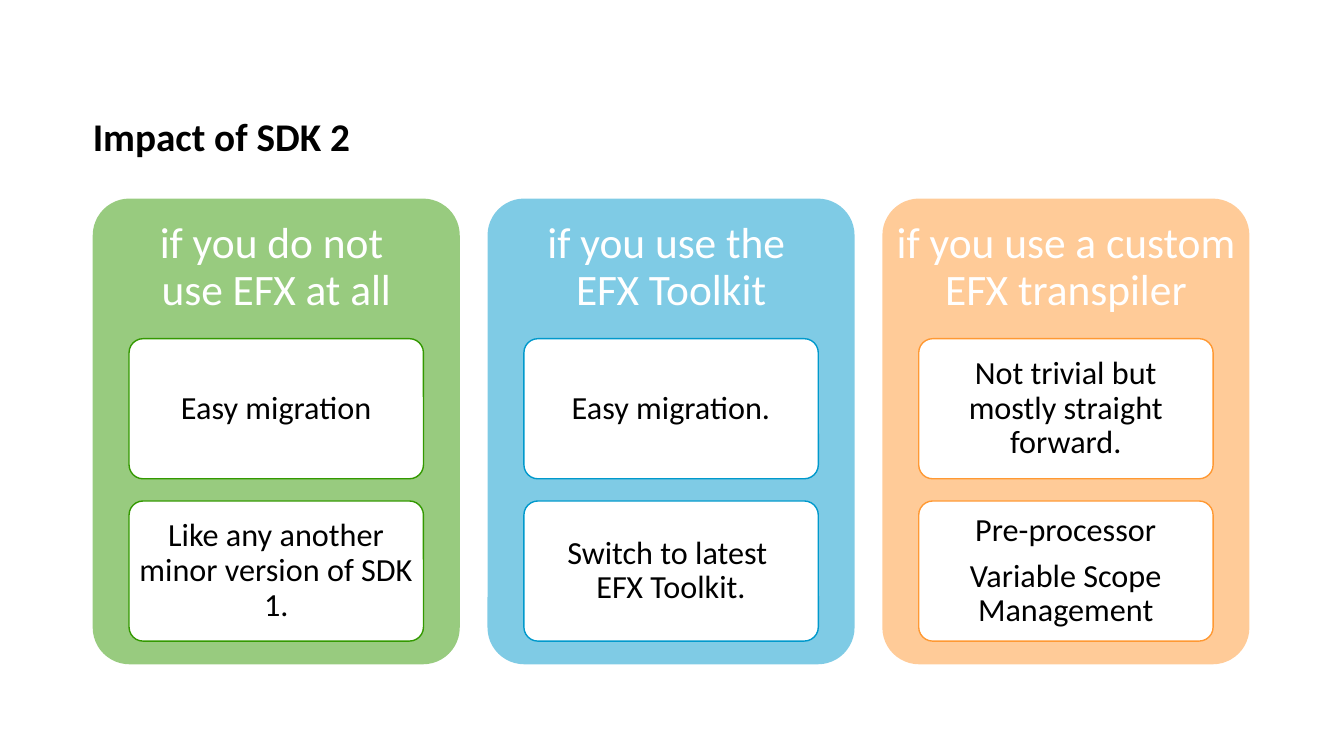
from lxml import etree
from pptx import Presentation
from pptx.dml.color import RGBColor
from pptx.enum import shapes, text
from pptx.oxml import ns
from pptx.util import Inches, Pt

COLORS = {
    "green": "339900",
    "blue": "0099CC",
    "orange": "FF9933",
    "white": "FFFFFF",
    "black": "000000",
}

# Panel grid, in inches
LEFT, TOP = 0.92, 1.97
PANEL_WIDTH, PANEL_HEIGHT, PANEL_STEP = 3.64, 4.62, 3.916
HEADING_HEIGHT = 1.38
CARD_WIDTH, CARD_HEIGHT, CARD_STEP = 2.92, 1.39, 1.61
CARD_TOP = 3.36

PANELS = [
    ("green", "if you do not \nuse EFX at all",
     [["Easy migration"], ["Like any another minor version of SDK 1."]]),
    ("blue", "if you use the \nEFX Toolkit",
     [["Easy migration."], ["Switch to latest \nEFX Toolkit."]]),
    ("orange", "if you use a custom EFX transpiler",
     [["Not trivial but mostly straight forward."],
      ["Pre-processor", "Variable Scope Management"]]),
]


def rgb(name):
    return RGBColor.from_string(COLORS[name])


def write_text(shape, paragraphs, size, color="black", bold=False,
               align=text.PP_ALIGN.CENTER, anchor=text.MSO_ANCHOR.MIDDLE,
               insets=(0, 0, 0, 0), space_after=0):
    """Fill a shape with paragraphs; a newline inside one is a line break."""
    frame = shape.text_frame
    frame.word_wrap = True
    frame.auto_size = text.MSO_AUTO_SIZE.NONE
    frame.vertical_anchor = anchor
    (frame.margin_left, frame.margin_top,
     frame.margin_right, frame.margin_bottom) = map(Inches, insets)
    for index, content in enumerate(paragraphs):
        paragraph = frame.add_paragraph() if index else frame.paragraphs[0]
        paragraph.text = content
        paragraph.alignment = align
        paragraph.line_spacing = 0.9
        paragraph.space_before = Pt(0)
        paragraph.space_after = Pt(space_after)
        for run in paragraph.runs:
            run.font.name = "Calibri"
            run.font.size = Pt(size)
            run.font.bold = bold
            run.font.color.rgb = rgb(color)


def add_rounded(slide, left, top, width, height, fill, line=None, opacity=None):
    shape = slide.shapes.add_shape(
        shapes.MSO_SHAPE.ROUNDED_RECTANGLE,
        Inches(left), Inches(top), Inches(width), Inches(height))
    shape.adjustments[0] = 0.1
    shape.shadow.inherit = False
    shape.fill.solid()
    shape.fill.fore_color.rgb = rgb(fill)
    if opacity is not None:
        color = shape.fill._xPr.find(".//" + ns.qn("a:srgbClr"))
        etree.SubElement(color, ns.qn("a:alpha"), val=str(opacity * 1000))
    if line:
        shape.line.color.rgb = rgb(line)
        shape.line.width = Pt(1)
    else:
        shape.line.fill.background()
    return shape


def add_title(slide, content):
    title = slide.shapes.title
    title.left, title.top = Inches(LEFT), Inches(0.14)
    title.width, title.height = Inches(11.48), Inches(1.45)
    write_text(title, [content], 28, bold=True, align=text.PP_ALIGN.LEFT,
               anchor=text.MSO_ANCHOR.BOTTOM, insets=(0, 0.05, 0, 0))


def add_panel(slide, left, color, heading, cards):
    # Tinted panel and its heading
    add_rounded(slide, left, TOP, PANEL_WIDTH, PANEL_HEIGHT, color, opacity=50)
    heading_box = slide.shapes.add_textbox(
        Inches(left), Inches(TOP), Inches(PANEL_WIDTH), Inches(HEADING_HEIGHT))
    write_text(heading_box, [heading], 31, color="white",
               insets=(0.13, 0.13, 0.13, 0.13), space_after=11)

    # White cards, centred in the panel
    card_left = left + (PANEL_WIDTH - CARD_WIDTH) / 2
    for row, paragraphs in enumerate(cards):
        card = add_rounded(slide, card_left, CARD_TOP + row * CARD_STEP,
                           CARD_WIDTH, CARD_HEIGHT, "white", line=color)
        write_text(card, paragraphs, 23, insets=(0.06, 0.05, 0.06, 0.05),
                   space_after=8)


def main():
    presentation = Presentation()
    presentation.slide_width = Inches(13.33)
    presentation.slide_height = Inches(7.5)
    slide = presentation.slides.add_slide(presentation.slide_layouts[5])

    add_title(slide, "Impact of SDK 2")
    for column, (color, heading, cards) in enumerate(PANELS):
        add_panel(slide, LEFT + column * PANEL_STEP, color, heading, cards)

    presentation.save("out.pptx")


if __name__ == "__main__":
    main()
